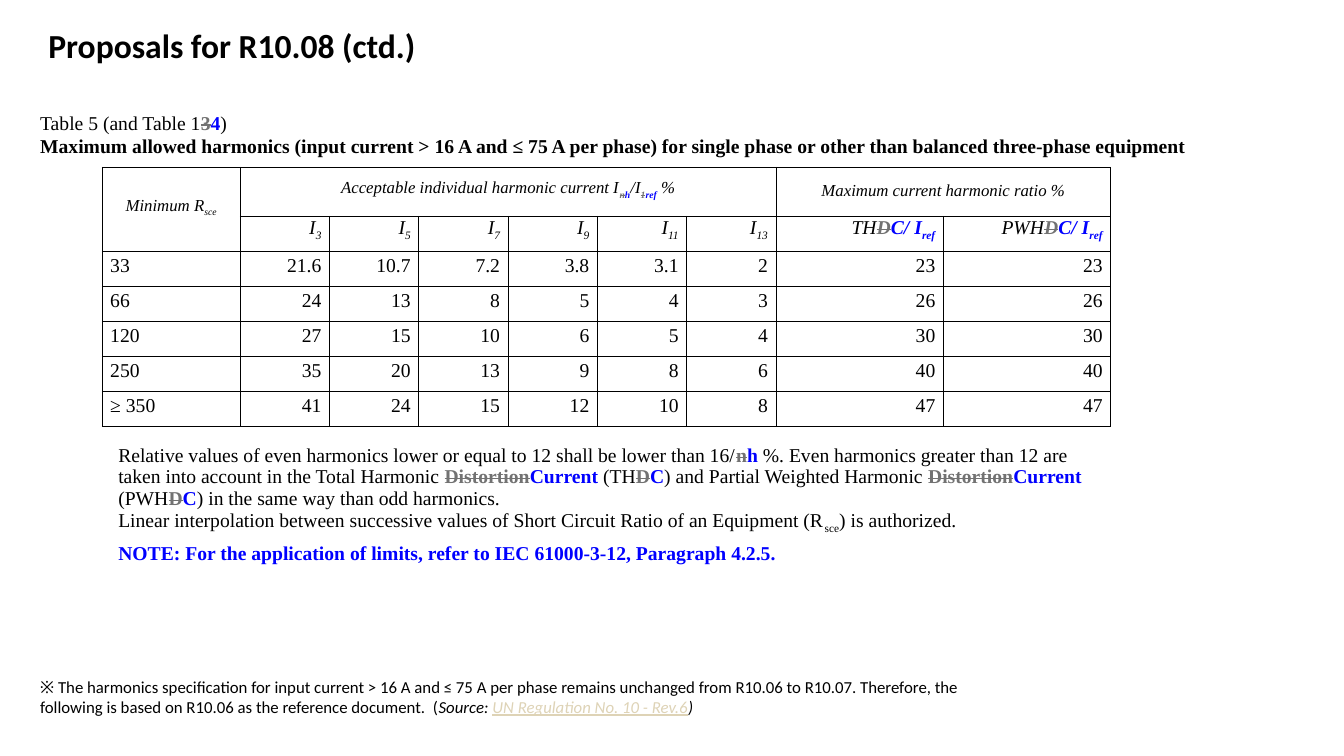
from lxml import etree
from pptx import Presentation
from pptx.dml.color import RGBColor
from pptx.enum.text import MSO_ANCHOR, MSO_AUTO_SIZE, PP_ALIGN
from pptx.oxml.ns import qn
from pptx.util import Pt

LEFT, CENTER, RIGHT = PP_ALIGN.LEFT, PP_ALIGN.CENTER, PP_ALIGN.RIGHT
TOP, MIDDLE = MSO_ANCHOR.TOP, MSO_ANCHOR.MIDDLE
FIT_SHAPE = MSO_AUTO_SIZE.SHAPE_TO_FIT_TEXT

BLACK = RGBColor(0x00, 0x00, 0x00)
DELETED_GRAY = RGBColor(0x72, 0x72, 0x72)
ADDED_BLUE = RGBColor(0x00, 0x00, 0xFF)
LINK_SAND = RGBColor(0xDE, 0xD3, 0xB6)
COLORS = {"old": DELETED_GRAY, "new": ADDED_BLUE, "link": LINK_SAND}

SANS, SERIF = "Calibri", "Times New Roman"
CELL_INDENT = Pt(5.75)
COLUMN_WIDTHS = [98.6] + [63.8] * 6 + [119.6] * 2
ROW_HEIGHTS = [35] + [25] * 6 + [112.4]

HARMONIC_ORDERS = ["3", "5", "7", "9", "11", "13"]
LIMITS = [
    ["33", "21.6", "10.7", "7.2", "3.8", "3.1", "2", "23", "23"],
    ["66", "24", "13", "8", "5", "4", "3", "26", "26"],
    ["120", "27", "15", "10", "6", "5", "4", "30", "30"],
    ["250", "35", "20", "13", "9", "8", "6", "40", "40"],
    ["≥ 350", "41", "24", "15", "12", "10", "8", "47", "47"],
]
GROUP_HEADERS = {
    0: [("Minimum R", "italic"), ("sce", "italic sub")],
    1: [("Acceptable individual harmonic current I", "italic"), ("n", "italic old sub"),
        ("h", "italic new sub"), ("/I", "italic"), ("1", "italic old sub"),
        ("ref", "italic new sub"), (" %", "italic")],
    7: [("Maximum current harmonic ratio %", "italic")],
}
EVEN_HARMONICS = [
    ("Relative values of even harmonics lower or equal to 12 shall be lower than 16/", ""),
    ("n", "old"), ("h", "new"),
    (" %. Even harmonics greater than 12 are taken into account in the Total Harmonic ", ""),
    ("Distortion", "old"), ("Current", "new"), (" (TH", ""), ("D", "old"), ("C", "new"),
    (") and Partial Weighted Harmonic ", ""),
    ("Distortion", "old"), ("Current", "new"), (" (PWH", ""), ("D", "old"), ("C", "new"),
    (") in the same way than odd harmonics.", ""),
]
INTERPOLATION = [
    ("Linear interpolation between successive values of Short Circuit Ratio of an Equipment (R", ""),
    ("sce", "sub"), (") is authorized.", ""),
]
LIMITS_NOTE = [
    ("NOTE: For the application of limits, refer to IEC 61000-3-12, Paragraph 4.2.5.", "new"),
]
CAPTION = [
    [("Table 5 (and Table 1", ""), ("3", "old"), ("4", "new"), (")", "")],
    [("Maximum allowed harmonics (input current > 16 A and ≤ 75 A per phase) "
      "for single phase or other than balanced three-phase equipment", "bold")],
]
FOOTNOTE = [
    ("※ The harmonics specification for input current > 16 A and ≤ 75 A per phase remains "
     "unchanged from R10.06 to R10.07. Therefore, the following is based on R10.06 as the "
     "reference document.  (", ""),
    ("Source: ", "italic"), ("UN Regulation No. 10 - Rev.6", "italic link"), (")", "italic"),
]


def add_runs(paragraph, pieces, size, typeface):
    """Add (text, marks) pieces, where marks name the formatting of each run."""
    for text, marks in pieces:
        marks = marks.split()
        run = paragraph.add_run()
        run.text = text
        font = run.font
        font.size, font.name = Pt(size), typeface
        font.bold = any(mark in marks for mark in ("bold", "old", "new"))
        font.italic = "italic" in marks
        font.underline = "link" in marks
        font.color.rgb = next((COLORS[mark] for mark in marks if mark in COLORS), BLACK)
        properties = run._r.get_or_add_rPr()
        if "old" in marks:
            properties.set("strike", "sngStrike")
        if "sub" in marks:
            properties.set("baseline", "-25000")


def add_text(slide, place, lines, size, typeface, anchor=TOP, wrap=True):
    """Add a text box at a place given in points and return its frame."""
    frame = slide.shapes.add_textbox(*(Pt(length) for length in place)).text_frame
    frame.word_wrap = wrap
    frame.auto_size = FIT_SHAPE
    frame.vertical_anchor = anchor
    for index, pieces in enumerate(lines):
        paragraph = frame.add_paragraph() if index else frame.paragraphs[0]
        add_runs(paragraph, pieces, size, typeface)
    return frame


def indent(paragraph):
    """Indent a cell paragraph on both sides."""
    properties = paragraph._p.get_or_add_pPr()
    for side in ("marL", "marR"):
        properties.set(side, str(int(CELL_INDENT)))


def style_cell(cell, sides):
    """Clear the fill and margins of a cell and rule the given sides."""
    properties = cell._tc.get_or_add_tcPr()
    for side in "LRTB":
        ruled = side in sides
        line = etree.SubElement(properties, qn(f"a:ln{side}"), w=str(int(Pt(0.5 if ruled else 0))))
        fill = etree.SubElement(line, qn("a:solidFill" if ruled else "a:noFill"))
        if ruled:
            etree.SubElement(fill, qn("a:srgbClr"), val=str(BLACK))
    cell.fill.background()
    cell.margin_left = cell.margin_right = cell.margin_top = cell.margin_bottom = 0
    cell.vertical_anchor = MIDDLE


def fill_cell(cell, pieces, size, alignment):
    """Write one tightly spaced line into a table cell."""
    paragraph = cell.text_frame.paragraphs[0]
    paragraph.alignment = alignment
    paragraph.line_spacing = Pt(12)
    paragraph.space_before = paragraph.space_after = Pt(2)
    indent(paragraph)
    add_runs(paragraph, pieces, size, SERIF)


def fill_remarks(cell):
    """Write the remarks that close the table."""
    cell.margin_left = CELL_INDENT
    frame = cell.text_frame
    remarks = [(EVEN_HARMONICS, 3, 0), (INTERPOLATION, 0, 6), (LIMITS_NOTE, 0, 6)]
    for index, (pieces, before, after) in enumerate(remarks):
        paragraph = frame.add_paragraph() if index else frame.paragraphs[0]
        paragraph.space_before, paragraph.space_after = Pt(before), Pt(after)
        indent(paragraph)
        add_runs(paragraph, pieces, 14, SERIF)


def add_limits_table(slide):
    """Add the table of harmonic limits."""
    last = len(ROW_HEIGHTS) - 1
    table = slide.shapes.add_table(
        len(ROW_HEIGHTS), len(COLUMN_WIDTHS), Pt(73), Pt(119.5),
        Pt(sum(COLUMN_WIDTHS)), Pt(sum(ROW_HEIGHTS))).table
    table.first_row = table.horz_banding = False
    for column, width in zip(table.columns, COLUMN_WIDTHS):
        column.width = Pt(width)
    for index, (row, height) in enumerate(zip(table.rows, ROW_HEIGHTS)):
        row.height = Pt(height)
        for cell in row.cells:
            style_cell(cell, "T" if index == last else "LRTB")
    for start, end in (((0, 0), (1, 0)), ((0, 1), (0, 6)), ((0, 7), (0, 8)), ((last, 0), (last, 8))):
        table.cell(*start).merge(table.cell(*end))

    for column, pieces in GROUP_HEADERS.items():
        fill_cell(table.cell(0, column), pieces, 12, CENTER)
    headers = [[("I", "italic"), (order, "italic sub")] for order in HARMONIC_ORDERS]
    headers += [[(ratio, "italic"), ("D", "italic old"), ("C/ I", "italic new"),
                 ("ref", "italic new sub")] for ratio in ("TH", "PWH")]
    for column, pieces in enumerate(headers, 1):
        fill_cell(table.cell(1, column), pieces, 14, RIGHT)
    for row, values in enumerate(LIMITS, 2):
        for column, value in enumerate(values):
            fill_cell(table.cell(row, column), [(value, "")], 14, RIGHT if column else LEFT)
    fill_remarks(table.cell(last, 0))


def main():
    """Build the slide and save it."""
    deck = Presentation()
    deck.slide_width, deck.slide_height = Pt(960), Pt(540)
    slide = deck.slides.add_slide(deck.slide_layouts[6])
    add_text(slide, (27.4, 14.4, 766.8, 33.8), [[("Proposals for R10.08 (ctd.)", "bold")]], 24, SANS)
    add_limits_table(slide)
    caption = add_text(slide, (21.6, 74.9, 888.5, 43.9), CAPTION, 14, SERIF, MIDDLE, False)
    caption.margin_right, caption.margin_bottom = Pt(56.9), Pt(5.8)
    add_text(slide, (21.6, 479.5, 676.8, 36), [FOOTNOTE], 12, SANS)
    deck.save("out.pptx")


if __name__ == "__main__":
    main()
